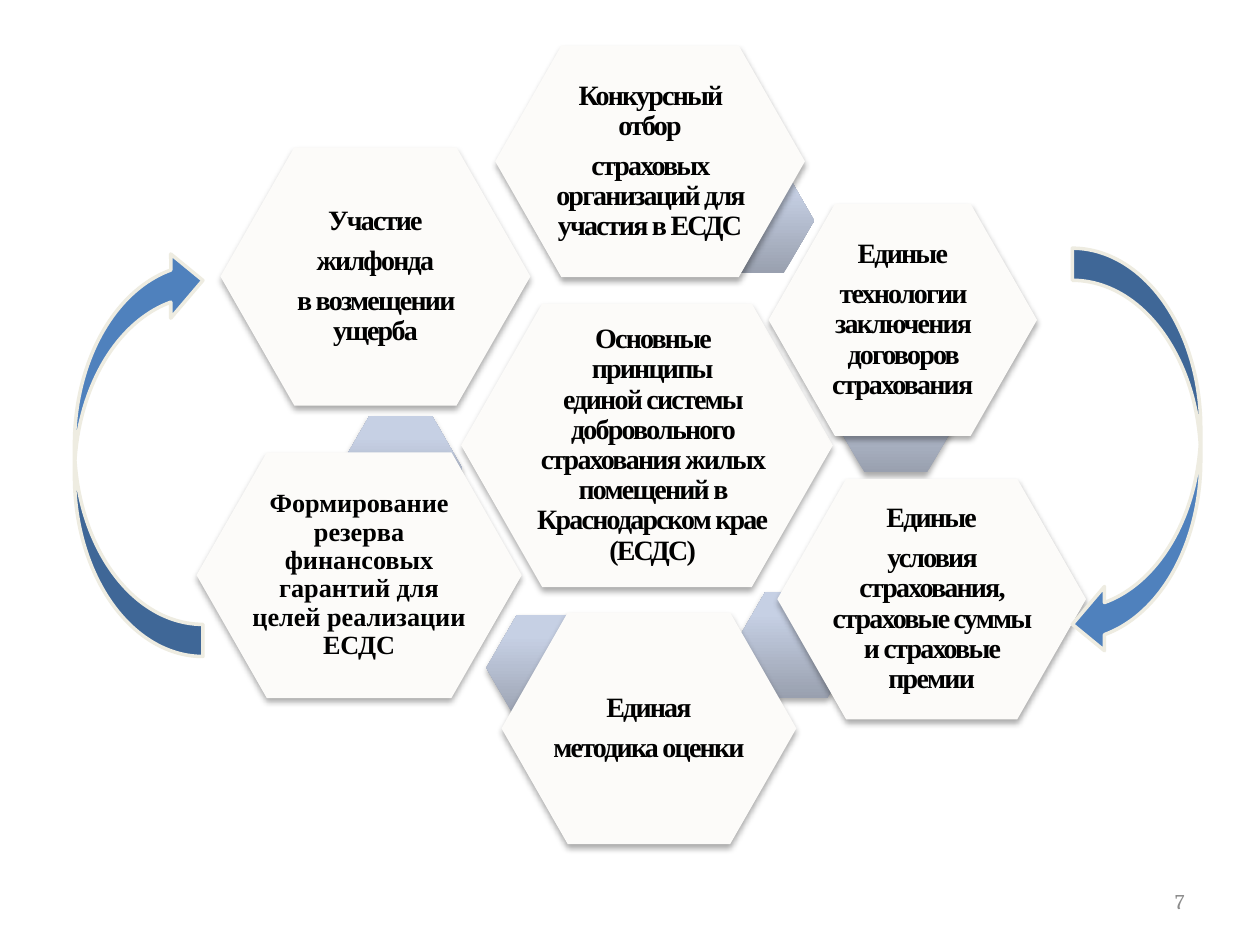
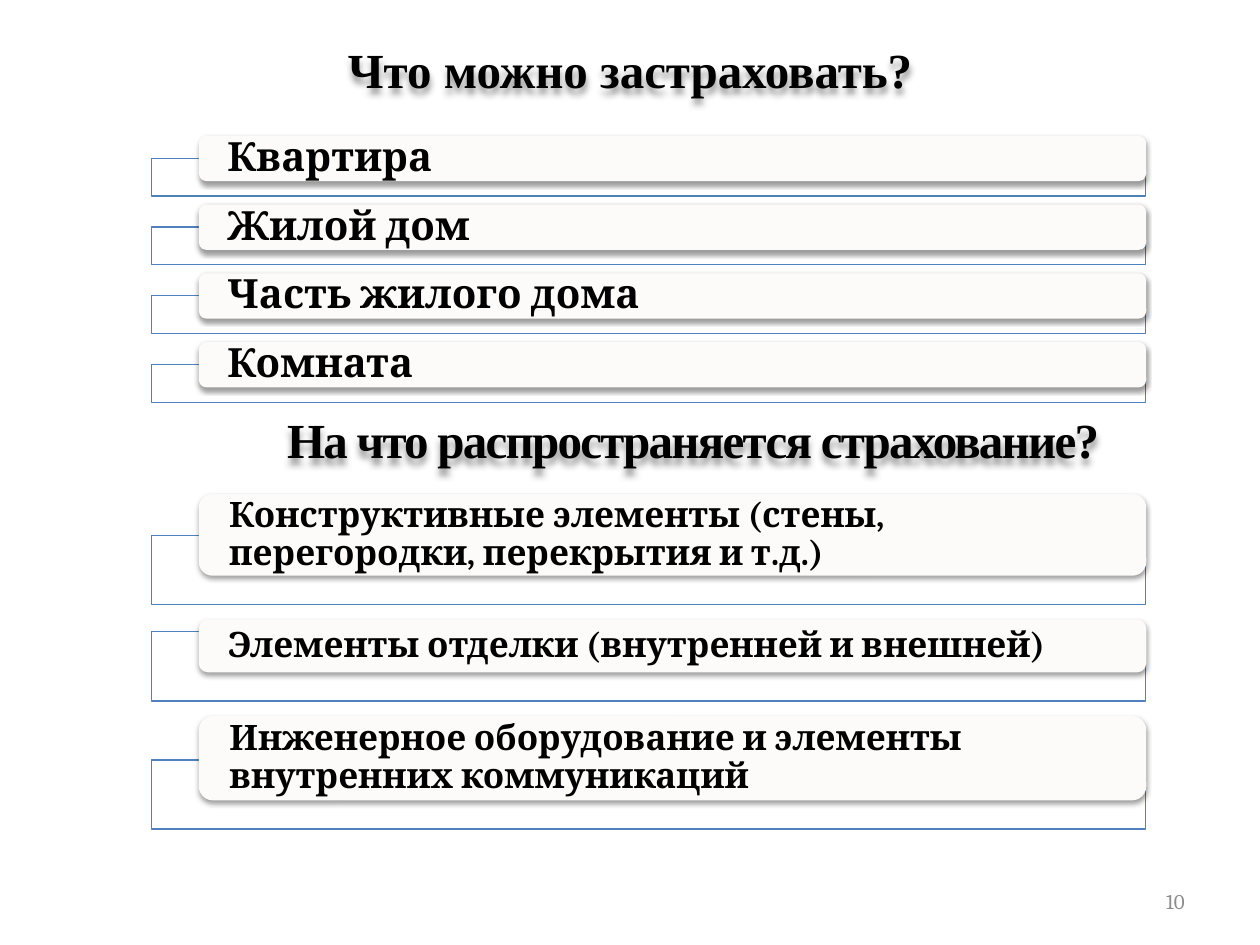
from dataclasses import dataclass
from typing import NamedTuple

from lxml import etree
from pptx import Presentation
from pptx.dml.color import RGBColor
from pptx.enum.shapes import MSO_SHAPE
from pptx.enum.text import MSO_ANCHOR, PP_ALIGN
from pptx.oxml.ns import qn
from pptx.shapes.autoshape import Shape
from pptx.slide import Slide
from pptx.util import Pt

HEXAGON = MSO_SHAPE.HEXAGON
CURVED_ARROW = MSO_SHAPE.CURVED_DOWN_ARROW
RECTANGLE = MSO_SHAPE.RECTANGLE
ROUNDED = MSO_SHAPE.ROUNDED_RECTANGLE
LEFT, CENTER, RIGHT = PP_ALIGN.LEFT, PP_ALIGN.CENTER, PP_ALIGN.RIGHT
MIDDLE, BOTTOM = MSO_ANCHOR.MIDDLE, MSO_ANCHOR.BOTTOM


class Box(NamedTuple):
    """Left, top, width and height in points."""
    left: float
    top: float
    width: float
    height: float


class Shadow(NamedTuple):
    """A shadow that falls straight down; opacity in percent, lengths in points."""
    opacity: float
    blur: float
    distance: float


@dataclass(frozen=True)
class Theme:
    serif: str = "Times New Roman"
    body: str = "Cambria"
    text: str = "000000"
    muted: str = "8C8C8C"
    panel: str = "FCFBF9"
    white: str = "FFFFFF"
    accent: str = "4F81BD"
    arrow_line: str = "EEECE1"
    link_dark: str = "99A0AF"
    link_light: str = "C6D0E4"
    heading_size: float = 28
    hexagon_size: float = 16
    page_size: float = 12
    hexagon_shadow: Shadow = Shadow(32, 3.5, 2.2)
    bar_shadow: Shadow = Shadow(38, 3.1, 1.6)
    heading_shadow: Shadow = Shadow(40, 4, 3)


THEME = Theme()


@dataclass(frozen=True)
class Principle:
    """A hexagon, with the top left corner of the link drawn behind it."""
    box: Box
    paragraphs: tuple[str, ...]
    link: tuple[float, float] | None = None
    link_shadow: bool = True
    size: float = THEME.hexagon_size
    spacing: float = -1
    indent: float = 0
    gap_share: float = 0.35


@dataclass(frozen=True)
class BarList:
    """Stacked bars, each over a frame that reaches below it."""
    top: float
    frame_height: float
    overhang: float
    gap: float
    size: float
    items: tuple[tuple[str, float], ...]  # text, bar height


# Content
PRINCIPLES = (
    Principle(Box(263.5, 173.5, 212.4, 162),
              ("Основные принципы",
               "единой системы добровольного страхования жилых помещений в Краснодарском крае",
               "(ЕСДС)"), indent=6.5, gap_share=0),
    Principle(Box(283, 26, 177, 132.5),
              ("Конкурсный отбор", "страховых организаций для участия в ЕСДС"),
              link=(394.6, 95.8), link_shadow=False),
    Principle(Box(439.2, 116.6, 153.4, 132.5),
              ("Единые", "технологии заключения договоров страхования"),
              link=(476.6, 209.5)),
    Principle(Box(444.2, 273.6, 176.4, 137.5),
              ("Единые", "условия страхования, страховые суммы и страховые премии"),
              link=(419.8, 338.4)),
    Principle(Box(286.6, 350, 168.5, 132.5),
              ("Единая", "методика оценки"), link=(277.9, 351.4)),
    Principle(Box(112.3, 258.5, 185.8, 140.4),
              ("Формирование резерва финансовых гарантий для целей реализации ЕСДС",),
              link=(193.7, 237.6), size=15, spacing=0),
    Principle(Box(126, 84.2, 177.1, 147.6),
              ("Участие", "жилфонда", "в возмещении ущерба")),
)
PROPERTY_TYPES = BarList(77.6, 21.6, 8.6, 4.8, 23, (
    ("Квартира", 25.9), ("Жилой дом", 25.9),
    ("Часть жилого дома", 25.9), ("Комната", 25.9)))
COVERED_PARTS = BarList(282.2, 39.6, 16.4, 8.6, 20, (
    ("Конструктивные элементы (стены, перегородки, перекрытия и т.д.)", 46.8),
    ("Элементы отделки (внутренней и внешней)", 30.2),
    ("Инженерное оборудование и элементы внутренних коммуникаций", 48.2)))


# Drawing helpers
def points(box: Box) -> list[Pt]:
    return [Pt(value) for value in box]


def color(value: str) -> RGBColor:
    return RGBColor.from_string(value)


def add_shadow(shape: Shape, shadow: Shadow) -> None:
    shape.shadow.inherit = False
    effects = shape._element.spPr.find(qn("a:effectLst"))
    outer = etree.SubElement(
        effects, qn("a:outerShdw"), blurRad=str(Pt(shadow.blur)),
        dist=str(Pt(shadow.distance)), dir="5400000", algn="ctr", rotWithShape="0")
    black = etree.SubElement(outer, qn("a:srgbClr"), val=THEME.text)
    etree.SubElement(black, qn("a:alpha"), val=str(round(shadow.opacity * 1000)))


def add_figure(slide: Slide, kind: int, box: Box, fill: str, *,
               line: str | None = None, line_width: float = 0.75,
               shadow: Shadow | None = None) -> Shape:
    shape = slide.shapes.add_shape(kind, *points(box))
    shape.fill.solid()
    shape.fill.fore_color.rgb = color(fill)
    if line:
        shape.line.color.rgb = color(line)
        shape.line.width = Pt(line_width)
    else:
        shape.line.fill.background()
    shape.shadow.inherit = False
    if shadow:
        add_shadow(shape, shadow)
    return shape


def write(shape: Shape, *paragraphs: str, font: str = THEME.serif,
          size: float = THEME.hexagon_size, bold: bool = True,
          text_color: str = THEME.text, align: int = CENTER, anchor: int = MIDDLE,
          insets: tuple[float, float] = (7.2, 3.6), line_spacing: float = 1,
          gap_share: float = 0, indent: float = 0, spacing: float = 0) -> None:
    frame = shape.text_frame
    frame.word_wrap = True
    frame.vertical_anchor = anchor
    frame.margin_left = frame.margin_right = Pt(insets[0])
    frame.margin_top = frame.margin_bottom = Pt(insets[1])
    for index, text in enumerate(paragraphs):
        paragraph = frame.add_paragraph() if index else frame.paragraphs[0]
        paragraph.alignment = align
        paragraph.line_spacing = line_spacing
        paragraph.space_after = Pt(size * gap_share)
        if indent:
            paragraph._p.get_or_add_pPr().set("marL", str(Pt(indent)))
        run = paragraph.add_run()
        run.text = text
        run.font.name = font
        run.font.size = Pt(size)
        run.font.bold = bold
        run.font.color.rgb = color(text_color)
        if spacing:
            run.font._element.set("spc", str(round(spacing * 100)))


def add_heading(slide: Slide, text: str, box: Box, *, anchor: int = MIDDLE,
                spacing: float = 0) -> None:
    heading = slide.shapes.add_textbox(*points(box))
    write(heading, text, size=THEME.heading_size, anchor=anchor, spacing=spacing)
    add_shadow(heading, THEME.heading_shadow)


def add_page_number(slide: Slide, number: int) -> None:
    footer = slide.shapes.add_textbox(*points(Box(516, 500.4, 168, 28.8)))
    write(footer, str(number), font=THEME.body, size=THEME.page_size, bold=False,
          text_color=THEME.muted, align=RIGHT)


def add_link(slide: Slide, left: float, top: float, shadow: Shadow | None) -> None:
    link = add_figure(slide, HEXAGON, Box(left, top, 70.6, 60.5), THEME.link_light,
                      shadow=shadow)
    link.adjustments[0] = 0.289
    link.fill.gradient()
    link.fill.gradient_angle = 90
    dark, light = link.fill.gradient_stops
    dark.color.rgb, dark.position = color(THEME.link_dark), 0
    light.color.rgb, light.position = color(THEME.link_light), 0.8


def add_principle(slide: Slide, principle: Principle) -> None:
    if principle.link:
        add_link(slide, *principle.link,
                 THEME.hexagon_shadow if principle.link_shadow else None)
    hexagon = add_figure(slide, HEXAGON, principle.box, THEME.panel,
                         shadow=THEME.hexagon_shadow)
    hexagon.adjustments[0] = 0.286
    write(hexagon, *principle.paragraphs, size=principle.size, insets=(1.4, 1.4),
          line_spacing=0.9, gap_share=principle.gap_share,
          indent=principle.indent, spacing=principle.spacing)


def add_bar_list(slide: Slide, bars: BarList) -> None:
    top = bars.top
    for text, height in bars.items:
        frame_bottom = top + height + bars.overhang
        add_figure(slide, RECTANGLE,
                   Box(86.4, frame_bottom - bars.frame_height, 568.4, bars.frame_height),
                   THEME.white, line=THEME.accent)
        bar = add_figure(slide, ROUNDED, Box(113.6, top, 541.4, height), THEME.panel,
                         shadow=THEME.bar_shadow)
        write(bar, text, font=THEME.body, size=bars.size, align=LEFT,
              insets=(15.1, 0), line_spacing=0.9, gap_share=0.35)
        top = frame_bottom + bars.gap


# Slides
def build_principles(slide: Slide) -> None:
    add_page_number(slide, 7)
    for principle in PRINCIPLES:
        add_principle(slide, principle)
    for left, rotation in ((-37.4, 270), (532.8, 90)):
        arrow = add_figure(slide, CURVED_ARROW, Box(left, 221.8, 233.3, 73.4),
                           THEME.accent, line=THEME.arrow_line, line_width=2)
        arrow.rotation = rotation


def build_coverage(slide: Slide) -> None:
    add_heading(slide, "Что можно застраховать?", Box(36, 9.4, 648, 59.8))
    add_page_number(slide, 10)
    add_bar_list(slide, PROPERTY_TYPES)
    add_bar_list(slide, COVERED_PARTS)
    add_heading(slide, "На что распространяется страхование?",
                Box(72, 231.8, 648, 39.6), anchor=BOTTOM, spacing=-1)


def main() -> None:
    presentation = Presentation()
    presentation.slide_width, presentation.slide_height = Pt(720), Pt(540)
    blank = presentation.slide_layouts[6]
    for build in (build_principles, build_coverage):
        build(presentation.slides.add_slide(blank))
    presentation.save("out.pptx")


if __name__ == "__main__":
    main()
